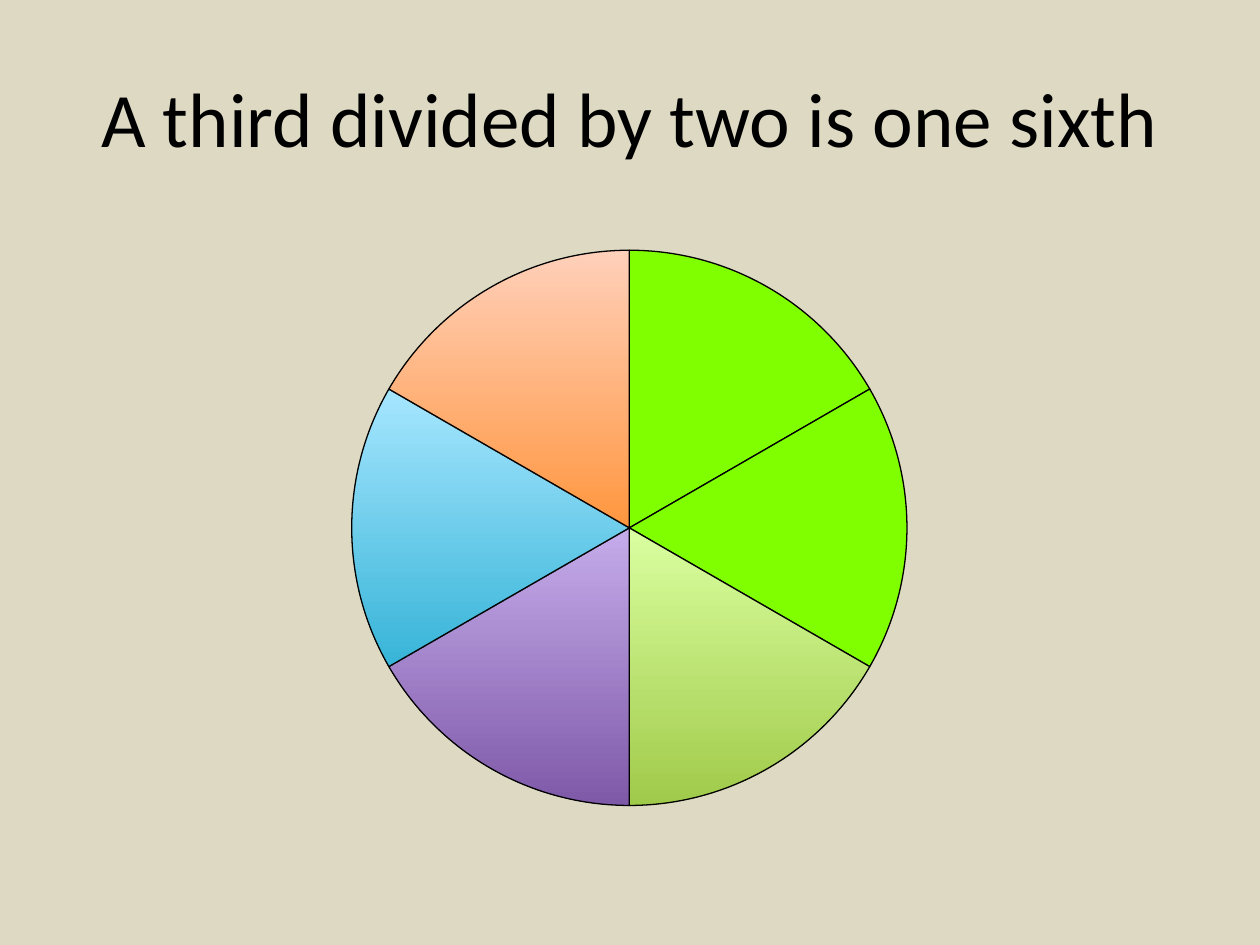
import lxml.etree
import pptx
import pptx.chart.data
import pptx.dml.color
import pptx.enum.chart
import pptx.enum.text
import pptx.oxml
import pptx.oxml.ns
import pptx.util
from pptx.dml.color import RGBColor
from pptx.util import Inches

BACKGROUND = RGBColor(0xDD, 0xD9, 0xC3)
BLACK = RGBColor(0x00, 0x00, 0x00)
BRIGHT_GREEN = RGBColor(0x80, 0xFF, 0x00)
SLICE_COLORS = [
    (BRIGHT_GREEN,),
    (BRIGHT_GREEN,),
    (RGBColor(0xDA, 0xFF, 0xA0), RGBColor(0xA0, 0xCA, 0x4A)),
    (RGBColor(0xC6, 0xAC, 0xEB), RGBColor(0x7E, 0x59, 0xA8)),
    (RGBColor(0xA6, 0xE6, 0xFF), RGBColor(0x37, 0xB4, 0xD8)),
    (RGBColor(0xFF, 0xD0, 0xBA), RGBColor(0xFF, 0x96, 0x3F)),
]
FONT = "Calibri"


def add_title(slide, text):
    """Add the centred slide title."""
    shape = slide.shapes.add_textbox(Inches(0.5), Inches(0.3), Inches(9), Inches(1.25))
    frame = shape.text_frame
    frame.word_wrap = True
    frame.vertical_anchor = pptx.enum.text.MSO_ANCHOR.MIDDLE
    frame.text = text
    paragraph = frame.paragraphs[0]
    paragraph.alignment = pptx.enum.text.PP_ALIGN.CENTER
    font = paragraph.runs[0].font
    font.name = FONT
    font.size = pptx.util.Pt(44)
    font.color.rgb = BLACK


def format_slice(point, colors):
    """Fill a slice with one colour, or with a gradient from top to bottom."""
    fill = point.format.fill
    if len(colors) == 1:
        fill.solid()
        fill.fore_color.rgb = colors[0]
    else:
        fill.gradient()
        fill.gradient_angle = 270
        for stop, color in zip(fill.gradient_stops, colors):
            stop.color.rgb = color
    point.format.line.color.rgb = BLACK
    point.format.line.width = pptx.util.Pt(0.75)


def set_plot_layout(chart, **fractions):
    """Place the plot area by fractions of the chart frame."""
    namespace = pptx.oxml.ns.nsdecls("c")
    places = "".join(f'<c:{key} val="{value}"/>' for key, value in fractions.items())
    layout = pptx.oxml.parse_xml(
        f'<c:layout {namespace}><c:manualLayout><c:layoutTarget val="inner"/>'
        f'<c:xMode val="edge"/><c:yMode val="edge"/>{places}</c:manualLayout></c:layout>'
    )
    plot_area = chart.plots[0]._element.getparent()
    for old_layout in plot_area.findall(pptx.oxml.ns.qn("c:layout")):
        plot_area.remove(old_layout)
    plot_area.insert(0, layout)


def add_pie(slide):
    """Add the pie of six equal slices."""
    data = pptx.chart.data.CategoryChartData()
    data.categories = [str(number + 1) for number in range(len(SLICE_COLORS))]
    data.add_series("Series 1", [17] * len(SLICE_COLORS))
    chart = slide.shapes.add_chart(
        pptx.enum.chart.XL_CHART_TYPE.PIE,
        Inches(1.06), Inches(1.83), Inches(7.87), Inches(4.72), data,
    ).chart
    chart.has_legend = False
    chart.has_title = False
    chart.font.name = FONT
    chart.font.size = pptx.util.Pt(10)
    chart.font.color.rgb = BLACK
    plot = chart.plots[0]
    plot.vary_by_categories = True
    for index, colors in enumerate(SLICE_COLORS):
        format_slice(plot.series[0].points[index], colors)
    set_plot_layout(chart, x=0.22, y=0.03, w=0.56, h=0.94)


def main():
    """Build and save the slide."""
    presentation = pptx.Presentation()
    presentation.slide_width = Inches(10)
    presentation.slide_height = Inches(7.5)
    slide = presentation.slides.add_slide(presentation.slide_layouts[6])
    slide.background.fill.solid()
    slide.background.fill.fore_color.rgb = BACKGROUND
    add_title(slide, "A third divided by two is one sixth")
    add_pie(slide)
    presentation.save("out.pptx")


if __name__ == "__main__":
    main()
